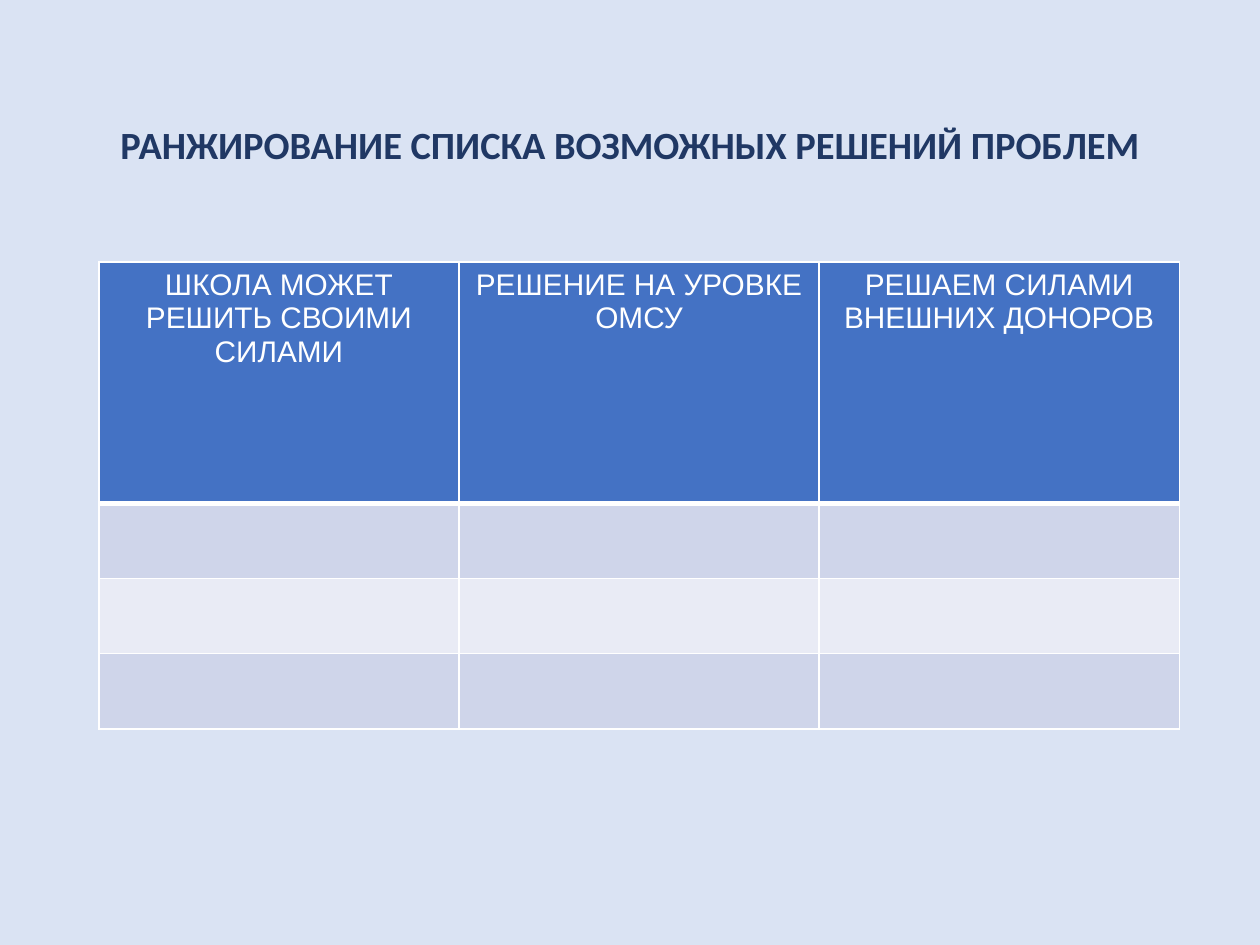
from lxml import etree
from pptx import Presentation
from pptx.dml.color import RGBColor
from pptx.enum.text import MSO_ANCHOR, PP_ALIGN
from pptx.oxml.ns import qn
from pptx.util import Pt

CENTER = PP_ALIGN.CENTER
MIDDLE = MSO_ANCHOR.MIDDLE

# Content
TITLE = "РАНЖИРОВАНИЕ СПИСКА ВОЗМОЖНЫХ РЕШЕНИЙ ПРОБЛЕМ"
HEADERS = [
    "ШКОЛА МОЖЕТ РЕШИТЬ СВОИМИ СИЛАМИ",
    "РЕШЕНИЕ НА УРОВКЕ ОМСУ",
    "РЕШАЕМ СИЛАМИ ВНЕШНИХ ДОНОРОВ",
]
COLORS = {
    "background": "DAE3F3",
    "title": "203864",
    "header": "4472C4",
    "odd": "CFD5EA",
    "even": "E9EBF5",
    "white": "FFFFFF",
}
ROW_FILLS = ["header", "odd", "even", "odd"]

# Layout in points
SLIDE_WIDTH, SLIDE_HEIGHT = 720, 540
TABLE_LEFT, TABLE_TOP, TABLE_WIDTH = 56.5, 149.8, 617.4
ROW_HEIGHTS = [137.8, 43, 43, 43]


def color(name):
    return RGBColor.from_string(COLORS[name])


def write(paragraph, text, font_name, size, color_name, bold=False):
    paragraph.text = text
    paragraph.alignment = CENTER
    font = paragraph.runs[0].font
    font.name, font.size, font.bold = font_name, Pt(size), bold
    font.color.rgb = color(color_name)


def add_borders(cell, bottom_width):
    properties = cell._tc.get_or_add_tcPr()
    widths = {"a:lnL": 1, "a:lnR": 1, "a:lnT": 1, "a:lnB": bottom_width}
    for index, (tag, width) in enumerate(widths.items()):
        line = etree.Element(qn(tag), w=str(Pt(width)))
        fill = etree.SubElement(line, qn("a:solidFill"))
        etree.SubElement(fill, qn("a:srgbClr"), val=COLORS["white"])
        properties.insert(index, line)


deck = Presentation()
deck.slide_width, deck.slide_height = Pt(SLIDE_WIDTH), Pt(SLIDE_HEIGHT)
slide = deck.slides.add_slide(deck.slide_layouts[6])
slide.background.fill.solid()
slide.background.fill.fore_color.rgb = color("background")

# Title
box = slide.shapes.add_textbox(Pt(0), Pt(39.6), Pt(SLIDE_WIDTH), Pt(96.5))
frame = box.text_frame
frame.word_wrap = True
frame.vertical_anchor = MIDDLE
frame.margin_bottom = Pt(15)
write(frame.paragraphs[0], TITLE, "Calibri", 22, "title", bold=True)

# Table
table = slide.shapes.add_table(
    len(ROW_HEIGHTS), len(HEADERS), Pt(TABLE_LEFT), Pt(TABLE_TOP),
    Pt(TABLE_WIDTH), Pt(sum(ROW_HEIGHTS))).table
for column in table.columns:
    column.width = Pt(TABLE_WIDTH / len(HEADERS))
for row, height, fill_name in zip(table.rows, ROW_HEIGHTS, ROW_FILLS):
    row.height = Pt(height)
    for cell in row.cells:
        cell.fill.solid()
        cell.fill.fore_color.rgb = color(fill_name)
        add_borders(cell, 3 if fill_name == "header" else 1)
for cell, header in zip(table.rows[0].cells, HEADERS):
    cell.margin_left = cell.margin_right = Pt(6.5)
    write(cell.text_frame.paragraphs[0], header, "Arial", 17, "white")

deck.save("out.pptx")
